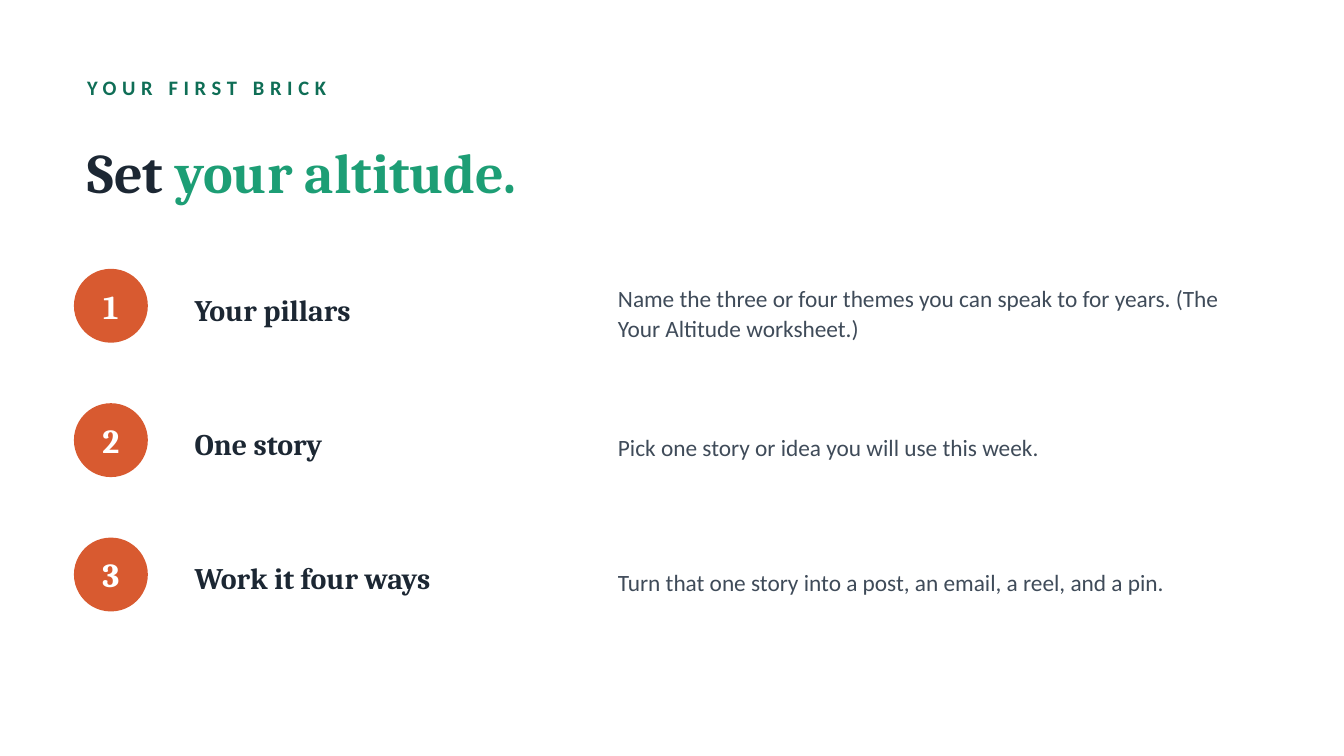
from pptx import Presentation
from pptx import util as u
from pptx.dml.color import RGBColor
from pptx.enum import shapes, text

COLORS = {
    "eyebrow": "0F6E56",
    "accent": "1D9E75",
    "ink": "1C2733",
    "body": "3F4B59",
    "badge": "D85A30",
    "white": "FFFFFF",
}
HEADING, BODY = "Cambria", "Calibri"
LEFT, WIDTH = 0.55, 8.9
FIRST_TOP, STEP_PITCH, BADGE_SIZE = 2, 1, 0.55

STEPS = [
    ("Your pillars",
     "Name the three or four themes you can speak to for years. "
     "(The Your Altitude worksheet.)"),
    ("One story", "Pick one story or idea you will use this week."),
    ("Work it four ways",
     "Turn that one story into a post, an email, a reel, and a pin."),
]


def color(name):
    return RGBColor.from_string(COLORS[name])


def write(shape, spans, size, font=HEADING, bold=True,
          align=text.PP_ALIGN.LEFT, line_spacing=None, tracking=None):
    """Fill a shape with one paragraph of (words, colour name) spans."""
    frame = shape.text_frame
    frame.word_wrap = True
    frame.auto_size = text.MSO_AUTO_SIZE.NONE
    frame.vertical_anchor = text.MSO_ANCHOR.MIDDLE
    para = frame.paragraphs[0]
    para.alignment = align
    if line_spacing:
        para.line_spacing = line_spacing
    for words, color_name in spans:
        span = para.add_run()
        span.text = words
        span.font.name = font
        span.font.size = u.Pt(size)
        span.font.bold = bold
        span.font.color.rgb = color(color_name)
        if tracking:
            span.font._element.set("spc", str(tracking * 100))


def add_text(page, left, top, width, height, words, color_name, **style):
    box = page.shapes.add_textbox(
        u.Inches(left), u.Inches(top), u.Inches(width), u.Inches(height))
    write(box, [(words, color_name)], **style)


def add_title(page, spans):
    title = page.shapes.title
    title.left, title.top = u.Inches(LEFT), u.Inches(0.85)
    title.width, title.height = u.Inches(WIDTH), u.Inches(0.85)
    write(title, spans, size=30)


def add_badge(page, top, number):
    badge = page.shapes.add_shape(
        shapes.MSO_SHAPE.OVAL, u.Inches(LEFT), u.Inches(top),
        u.Inches(BADGE_SIZE), u.Inches(BADGE_SIZE))
    badge.shadow.inherit = False
    badge.fill.solid()
    badge.fill.fore_color.rgb = color("badge")
    badge.line.fill.background()
    frame = badge.text_frame
    frame.margin_left = frame.margin_right = 0
    frame.margin_top = frame.margin_bottom = 0
    write(badge, [(str(number), "white")], size=18,
          align=text.PP_ALIGN.CENTER)


def add_step(page, number, name, detail):
    top = FIRST_TOP + (number - 1) * STEP_PITCH
    add_badge(page, top, number)
    add_text(page, 1.35, top - 0.05, 3, 0.7, name, "ink", size=16)
    add_text(page, 4.5, top - 0.05, 5, 0.75, detail, "body", size=12.5,
             font=BODY, bold=False, line_spacing=1.05)


def main():
    deck = Presentation()
    deck.slide_width = u.Inches(10)
    deck.slide_height = u.Inches(10 * 9 / 16)
    page = deck.slides.add_slide(deck.slide_layouts.get_by_name("Title Only"))
    page.background.fill.solid()
    page.background.fill.fore_color.rgb = color("white")

    add_text(page, LEFT, 0.5, WIDTH, 0.3, "YOUR FIRST BRICK", "eyebrow",
             size=11, font=BODY, tracking=3)
    add_title(page, [("Set ", "ink"), ("your altitude.", "accent")])
    for number, (name, detail) in enumerate(STEPS, start=1):
        add_step(page, number, name, detail)
    deck.save("out.pptx")


if __name__ == "__main__":
    main()
